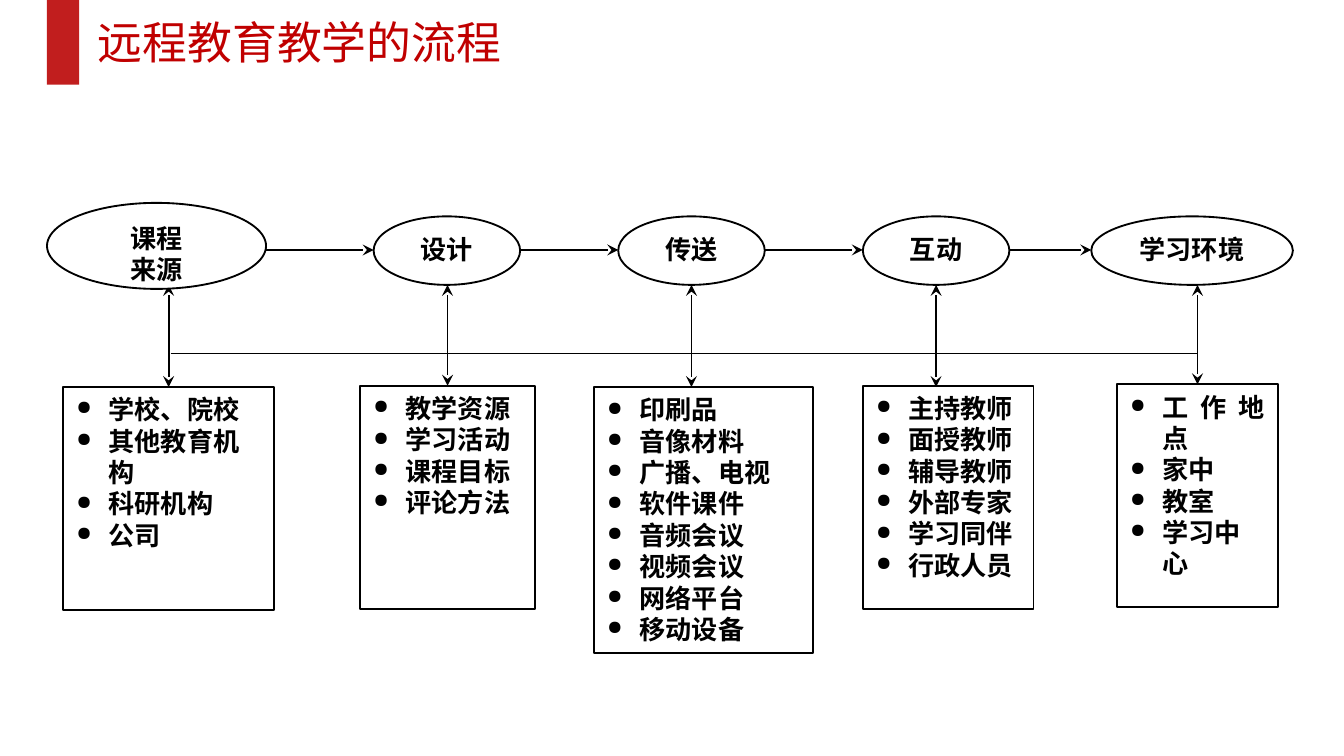
from dataclasses import dataclass

from lxml import etree
from pptx import Presentation, util as u
from pptx.dml.color import RGBColor
from pptx.enum import shapes, text
from pptx.oxml.ns import qn

PX = 9144  # EMU in one px: 100 px to the inch


@dataclass(frozen=True)
class Theme:
    font: str = "Noto Sans CJK SC"
    paper: str = "FFFFFF"
    ink: str = "000000"
    title: str = "C00000"
    accent: str = "C11E1E"
    title_size: int = 24
    body_size: int = 14
    line_width: int = 1
    leading: float = 1.2
    bullet_scale: str = "75000"


THEME = Theme()
SLIDE_WIDTH = 1000
ARROW_Y, RAIL_Y = 186, 263
LINK_TOP, LINK_BOTTOM = 212, 288
BULLET_INDENT = 24

# Stage lines, ellipse frame, list items, list frame, whether the link is centred on the list
STAGES = [
    (["课程", "来源"], (35, 151, 163, 64),
     ["学校、院校", "其他教育机构", "科研机构", "公司"], (47, 288, 157, 166), True),
    (["设计"], (278, 161, 109, 51),
     ["教学资源", "学习活动", "课程目标", "评论方法"], (268, 287, 130, 166), True),
    (["传送"], (460, 161, 109, 51),
     ["印刷品", "音像材料", "广播、电视", "软件课件", "音频会议", "视频会议",
      "网络平台", "移动设备"], (442, 288, 163, 198), False),
    (["互动"], (642, 161, 109, 51),
     ["主持教师", "面授教师", "辅导教师", "外部专家", "学习同伴", "行政人员"],
     (642, 287, 127, 166), False),
    (["学习环境"], (812, 161, 150, 51),
     ["工作地点", "家中", "教室", "学习中心"], (831, 286, 120, 166), True),
]


def emu(*lengths):
    return [u.Emu(round(length * PX)) for length in lengths]


def rgb(colour):
    return RGBColor.from_string(colour)


def apply(target, values):
    for name, value in values.items():
        setattr(target, name, value)


def add_bullet(para):
    props = para._p.get_or_add_pPr()
    indent = BULLET_INDENT * PX
    props.set("marL", str(indent))
    props.set("indent", str(-indent))
    etree.SubElement(props, qn("a:buSzPct")).set("val", THEME.bullet_scale)
    etree.SubElement(props, qn("a:buChar")).set("char", "●")


def write(box, lines, size, colour, bold=False, bullets=False, aligns=()):
    """Fill a shape with paragraphs; aligns gives the alignment of the leading ones."""
    frame = box.text_frame
    left, upper, right, lower = emu(10, 5, 10, 5)
    apply(frame, {
        "word_wrap": True, "vertical_anchor": text.MSO_ANCHOR.TOP,
        "margin_left": left, "margin_top": upper,
        "margin_right": right, "margin_bottom": lower,
    })
    for index, line in enumerate(lines):
        para = frame.add_paragraph() if index else frame.paragraphs[0]
        align = aligns[index] if index < len(aligns) else text.PP_ALIGN.LEFT
        apply(para, {"alignment": align, "line_spacing": u.Pt(size * THEME.leading)})
        if bullets:
            add_bullet(para)
        span = para.add_run()
        span.text = line
        apply(span.font, {"name": THEME.font, "size": u.Pt(size), "bold": bold})
        span.font.color.rgb = rgb(colour)
        east_asian = etree.SubElement(span.font._element, qn("a:ea"))
        east_asian.set("typeface", THEME.font)


def add_panel(page, kind, frame, fill, outlined=True):
    panel = page.shapes.add_shape(kind, *emu(*frame))
    panel.shadow.inherit = False
    panel.fill.solid()
    panel.fill.fore_color.rgb = rgb(fill)
    if outlined:
        panel.line.color.rgb = rgb(THEME.ink)
        panel.line.width = u.Pt(THEME.line_width)
    else:
        panel.line.fill.background()
    return panel


def add_line(page, start, end, heads=()):
    """Draw a straight line; heads holds "headEnd" and "tailEnd" as needed, in that order."""
    line = page.shapes.add_connector(shapes.MSO_CONNECTOR.STRAIGHT, *emu(*start, *end))
    line.line.color.rgb = rgb(THEME.ink)
    line.line.width = u.Pt(THEME.line_width)
    for head in heads:
        etree.SubElement(line.line._get_or_add_ln(), qn(f"a:{head}")).set("type", "stealth")
    etree.SubElement(line._element.spPr, qn("a:effectLst"))
    return line


def add_title(page, title):
    box = page.shapes.add_textbox(*emu(63, 6, 374, 50))
    write(box, [title], THEME.title_size, THEME.title)
    add_panel(page, shapes.MSO_SHAPE.RECTANGLE, (35, 0, 24, 63), THEME.accent, outlined=False)


def add_list(page, items, frame):
    box = add_panel(page, shapes.MSO_SHAPE.RECTANGLE, frame, THEME.paper)
    write(box, items, THEME.body_size, THEME.ink, bold=True, bullets=True,
          aligns=[text.PP_ALIGN.JUSTIFY])
    return box


def add_stage(page, lines, frame):
    stage = add_panel(page, shapes.MSO_SHAPE.OVAL, frame, THEME.paper)
    write(stage, lines, THEME.body_size, THEME.ink, bold=True,
          aligns=[text.PP_ALIGN.CENTER] * len(lines))


def add_column(page, lines, oval, items, frame, joined):
    """Draw a stage, its list below and the two-way link between them."""
    box = add_list(page, items, frame)
    left, _, width, _ = frame if joined else oval
    middle = left + width / 2
    link = add_line(page, (middle, LINK_TOP), (middle, LINK_BOTTOM), ["headEnd", "tailEnd"])
    if joined:
        link.end_connect(box, 0)
    add_stage(page, lines, oval)


def main():
    deck = Presentation()
    deck.slide_width, deck.slide_height = emu(SLIDE_WIDTH, SLIDE_WIDTH * 9 / 16)
    page = deck.slides.add_slide(deck.slide_layouts[6])
    page.background.fill.solid()
    page.background.fill.fore_color.rgb = rgb(THEME.paper)

    add_title(page, "远程教育教学的流程")
    for stage in STAGES:
        add_column(page, *stage)
    add_line(page, (127, RAIL_Y), (891, RAIL_Y))
    ovals = [stage[1] for stage in STAGES]
    for (left, _, width, _), following in zip(ovals, ovals[1:]):
        add_line(page, (left + width, ARROW_Y), (following[0], ARROW_Y), ["tailEnd"])

    deck.save("out.pptx")


if __name__ == "__main__":
    main()
